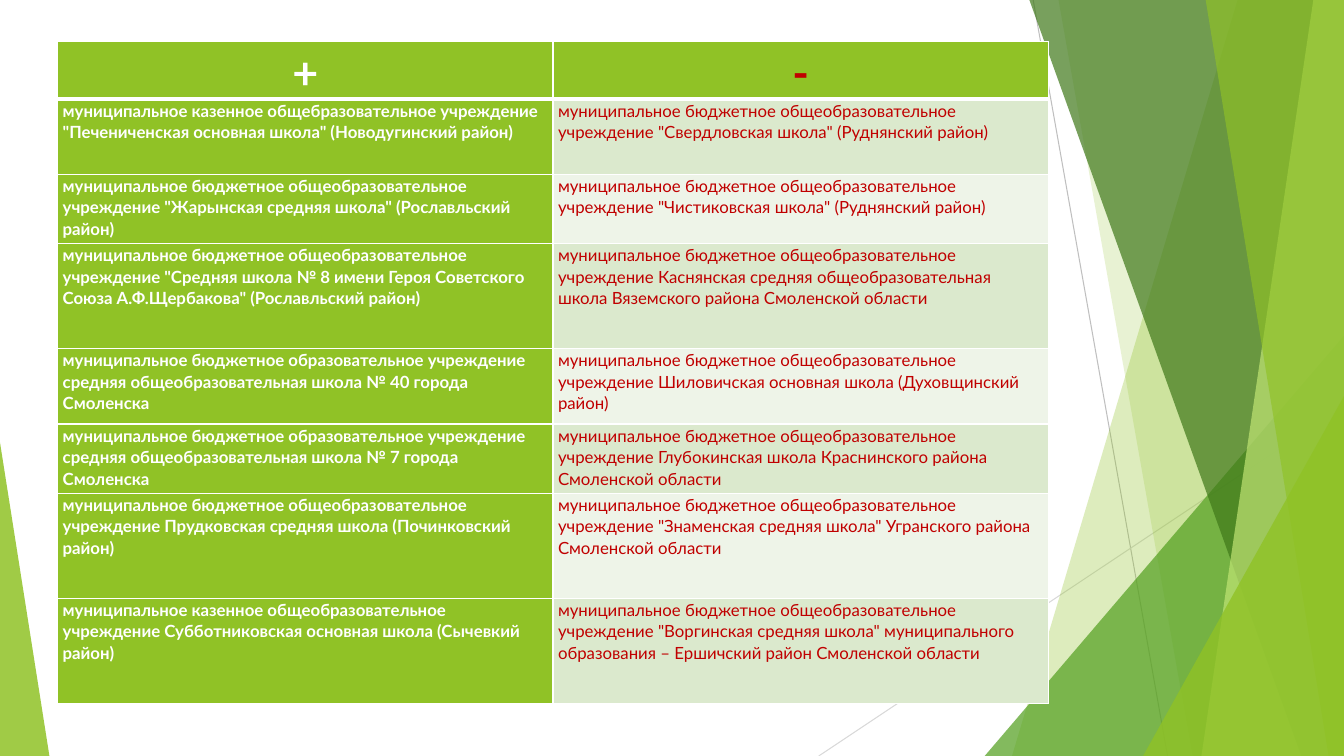
from lxml import etree
from pptx import Presentation
from pptx.dml.color import RGBColor
from pptx.enum.shapes import MSO_CONNECTOR, MSO_SHAPE
from pptx.enum.text import PP_ALIGN
from pptx.oxml.ns import qn
from pptx.util import Pt

STRAIGHT = MSO_CONNECTOR.STRAIGHT
TRIANGLE = MSO_SHAPE.ISOSCELES_TRIANGLE
CENTER, LEFT = PP_ALIGN.CENTER, PP_ALIGN.LEFT

FONT = "Lato"
COLORS = {
    "white": "FFFFFF", "red": "C00000", "lime": "90C226", "green": "54A021",
    "dark": "3F7819", "pale": "C0E474", "odd": "DBE9CD", "even": "EEF4E8",
    "gray": "BFBFBF", "light_gray": "D9D9D9",
}
WIDTH, HEIGHT = 960, 540
BLEED = -0.6

HEADINGS = ("+", "-")
SCHOOLS = [
    ('муниципальное казенное общебразовательное учреждение "Печениченская основная школа" (Новодугинский район)',
     'муниципальное бюджетное общеобразовательное учреждение "Свердловская школа" (Руднянский район)'),
    ('муниципальное бюджетное общеобразовательное учреждение "Жарынская средняя школа" (Рославльский район)',
     'муниципальное бюджетное общеобразовательное учреждение "Чистиковская школа" (Руднянский район)'),
    ('муниципальное бюджетное общеобразовательное учреждение "Средняя школа № 8 имени Героя Советского Союза А.Ф.Щербакова" (Рославльский район)',
     'муниципальное бюджетное общеобразовательное учреждение Каснянская средняя общеобразовательная школа Вяземского района Смоленской области'),
    ('муниципальное бюджетное образовательное учреждение средняя общеобразовательная школа № 40 города Смоленска',
     'муниципальное бюджетное общеобразовательное учреждение Шиловичская основная школа (Духовщинский район)'),
    ('муниципальное бюджетное образовательное учреждение средняя общеобразовательная школа № 7 города Смоленска',
     'муниципальное бюджетное общеобразовательное учреждение Глубокинская школа Краснинского района Смоленской области'),
    ('муниципальное бюджетное общеобразовательное учреждение Прудковская средняя школа (Починковский район)',
     'муниципальное бюджетное общеобразовательное учреждение "Знаменская средняя школа" Угранского района Смоленской области'),
    ('муниципальное казенное общеобразовательное учреждение Субботниковская основная школа (Сычевкий район)',
     'муниципальное бюджетное общеобразовательное учреждение "Воргинская средняя школа" муниципального образования – Ершичский район Смоленской области'),
]
ROW_HEIGHTS = (41.2, 53.5, 49.5, 75, 54, 49.5, 75, 75)
TABLE_LEFT, TABLE_TOP, COLUMN_WIDTH = 41.2, 29.7, 353.8

RAYS = [
    ((738, 0), (834, HEIGHT), "gray"),
    ((WIDTH, 290), (584.8, HEIGHT), "light_gray"),
]
FACETS = [
    ("band", (884.2, 722.9), "lime", 30),
    ("band", (756, 851.8), "lime", 20),
    ("wedge", (703.4, 239.8, 256.6, 1), "green", 72),
    ("band", (735.1, 929.5), "dark", 70),
    ("band", (938.2, 858.2), "pale", 70),
    ("band", (861.1, 949), "lime", 65),
    ("wedge", (816.5, 283, 143.5, 1), "lime", 80),
    ("wedge", (0, 316.1, 35.3, 0), "lime", 85),
]


def rgb(name):
    return RGBColor.from_string(COLORS[name])


def add_ray(slide, start, end, color):
    ray = slide.shapes.add_connector(STRAIGHT, *map(Pt, start + end))
    ray.line.color.rgb = rgb(color)
    ray.line.width = Pt(0.75)
    etree.SubElement(ray._element.spPr, qn("a:effectLst"))


def add_band(slide, top_x, bottom_x):
    builder = slide.shapes.build_freeform(Pt(top_x), Pt(BLEED))
    corners = [(WIDTH, BLEED), (WIDTH, HEIGHT), (bottom_x, HEIGHT)]
    builder.add_line_segments([(Pt(x), Pt(y)) for x, y in corners])
    return builder.convert_to_shape()


def add_wedge(slide, left, top, width, apex):
    wedge = slide.shapes.add_shape(TRIANGLE, Pt(left), Pt(top), Pt(width), Pt(HEIGHT - top))
    wedge.adjustments[0] = apex
    return wedge


def paint(shape, color, opacity):
    shape.shadow.inherit = False
    shape.line.fill.background()
    shape.fill.solid()
    shape.fill.fore_color.rgb = rgb(color)
    tint = shape._element.spPr.find(qn("a:solidFill"))[0]
    etree.SubElement(tint, qn("a:alpha")).set("val", str(opacity * 1000))


def set_borders(cell, row):
    properties = cell._tc.get_or_add_tcPr()
    widths = {"L": 1, "R": 1, "T": 3 if row == 1 else 1, "B": 3 if row == 0 else 1}
    for side, width in widths.items():
        line = etree.SubElement(properties, qn(f"a:ln{side}"), w=str(Pt(width)))
        fill = etree.SubElement(line, qn("a:solidFill"))
        etree.SubElement(fill, qn("a:srgbClr"), val=COLORS["white"])


def fill_cell(cell, text, row, column):
    header = row == 0
    cell.margin_left = cell.margin_right = Pt(3.6)
    cell.margin_top = cell.margin_bottom = 0
    set_borders(cell, row)
    cell.fill.solid()
    band = "odd" if row % 2 else "even"
    cell.fill.fore_color.rgb = rgb("lime" if header or column == 0 else band)
    para = cell.text_frame.paragraphs[0]
    para.alignment = CENTER if header else LEFT
    para.line_spacing = 1.07
    span = para.add_run()
    span.text = text
    span.font.name = FONT
    span.font.size = Pt(32 if header else 12)
    span.font.bold = header or column == 0
    span.font.color.rgb = rgb("red" if column else "white")


def add_school_table(slide):
    rows = [HEADINGS] + SCHOOLS
    columns = len(HEADINGS)
    table = slide.shapes.add_table(
        len(rows), columns, Pt(TABLE_LEFT), Pt(TABLE_TOP),
        Pt(COLUMN_WIDTH * columns), Pt(sum(ROW_HEIGHTS))).table
    for column in table.columns:
        column.width = Pt(COLUMN_WIDTH)
    for row, texts in enumerate(rows):
        table.rows[row].height = Pt(ROW_HEIGHTS[row])
        for column, text in enumerate(texts):
            fill_cell(table.cell(row, column), text, row, column)


def main():
    deck = Presentation()
    deck.slide_width, deck.slide_height = Pt(WIDTH), Pt(HEIGHT)
    slide = deck.slides.add_slide(deck.slide_layouts[6])
    for ray in RAYS:
        add_ray(slide, *ray)
    makers = {"band": add_band, "wedge": add_wedge}
    for kind, geometry, color, opacity in FACETS:
        paint(makers[kind](slide, *geometry), color, opacity)
    add_school_table(slide)
    deck.save("out.pptx")


if __name__ == "__main__":
    main()
